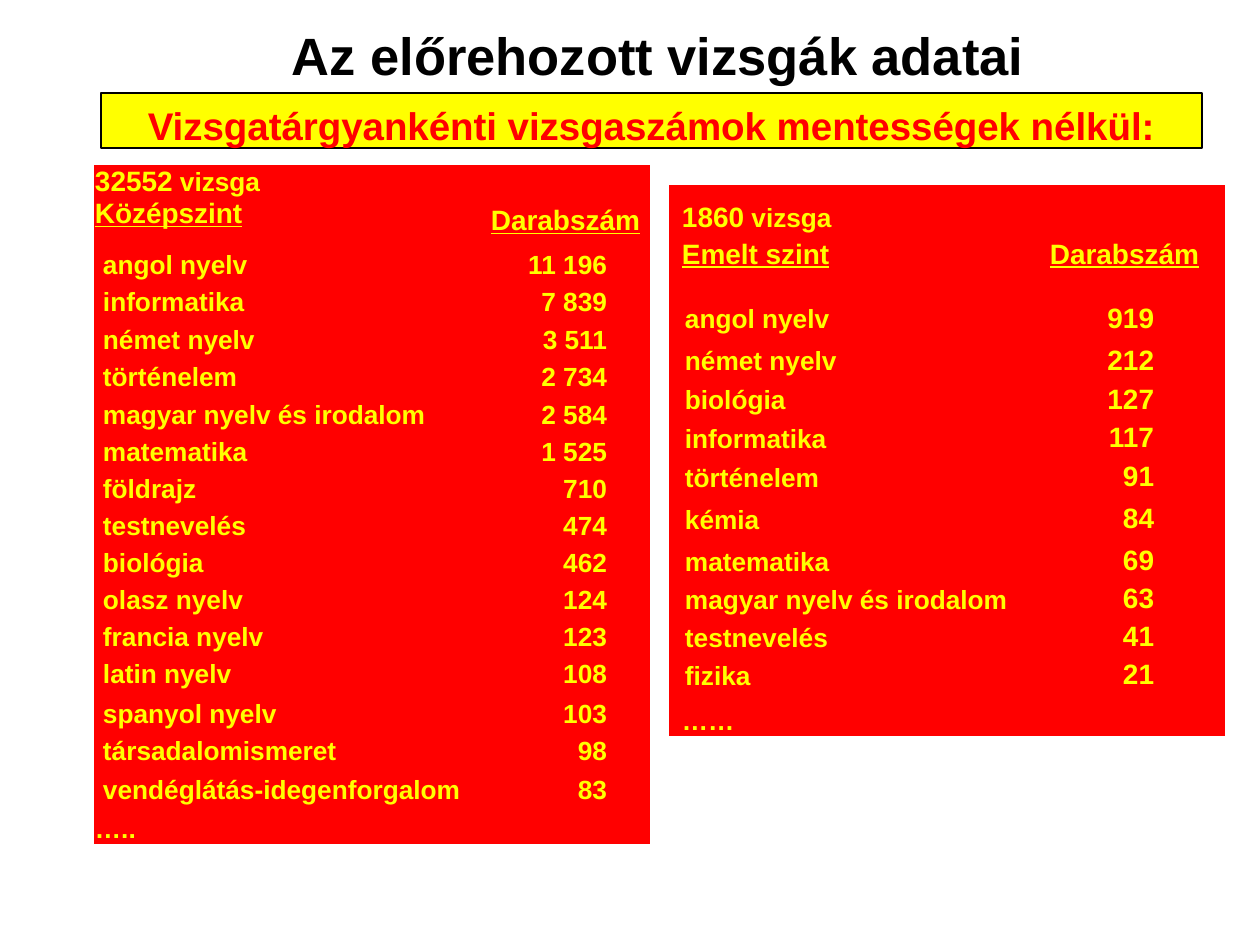
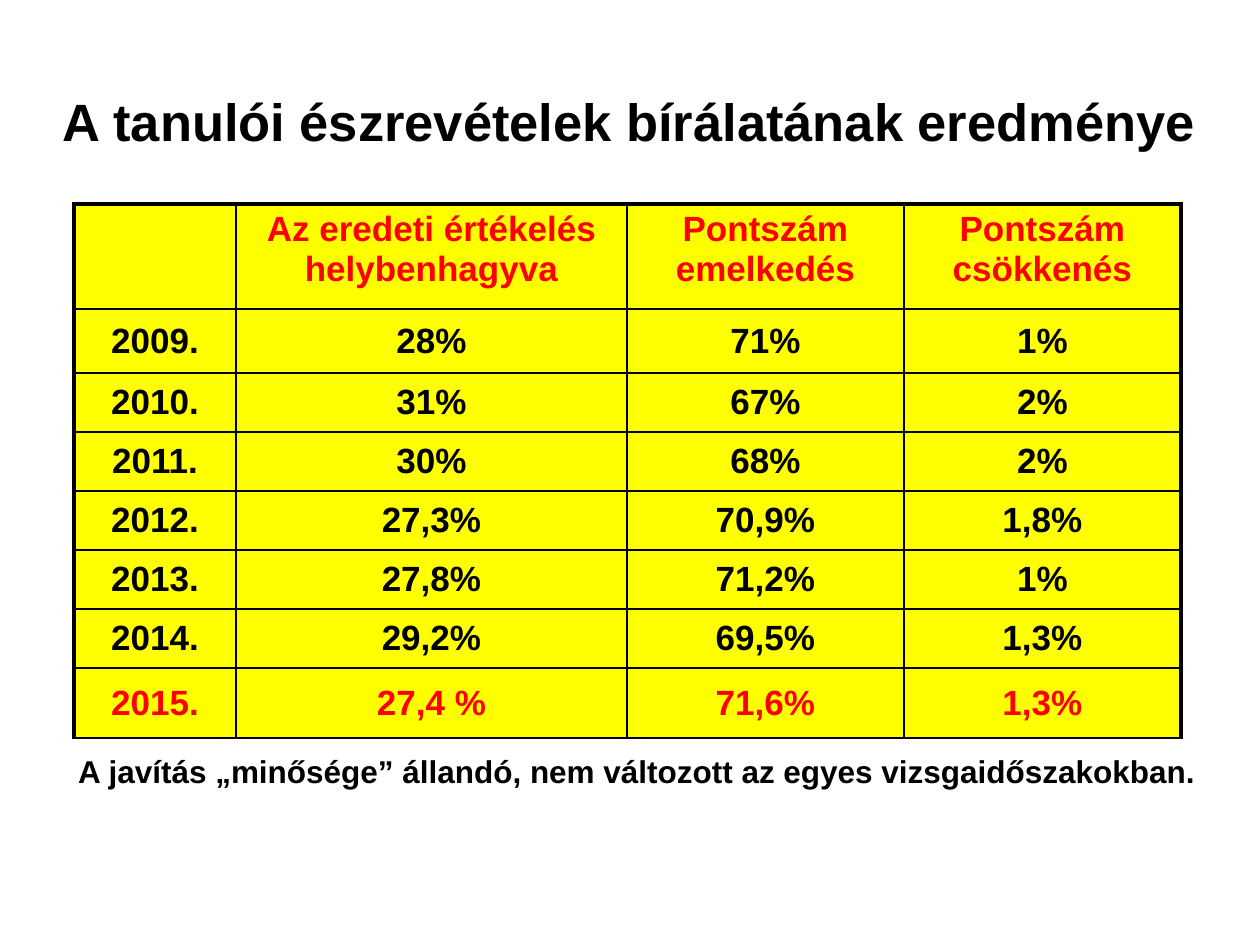
from dataclasses import dataclass
from lxml import etree
from pptx import Presentation
from pptx import util as u
from pptx.dml.color import RGBColor
from pptx.enum import shapes, text
from pptx.oxml.ns import qn


@dataclass(frozen=True)
class Theme:
    font: str = "Arial"
    black: str = "000000"
    red: str = "FF0000"
    yellow: str = "FFFF00"
    title: int = 30
    band: int = 22
    grid: int = 20
    note: int = 18
    head: int = 16
    item: int = 15


T = Theme()
LEFT, MID, RIGHT = text.PP_ALIGN.LEFT, text.PP_ALIGN.CENTER, text.PP_ALIGN.RIGHT
TOP, CENTRE, BASE = (text.MSO_ANCHOR.TOP, text.MSO_ANCHOR.MIDDLE,
                     text.MSO_ANCHOR.BOTTOM)
PLAIN = "{2D5ABB26-0587-4C30-8999-92F81FD0307C}"  # table style without grid

EXAMS = {
    "title": "Az előrehozott vizsgák adatai",
    "band": "Vizsgatárgyankénti vizsgaszámok mentességek nélkül:",
    "unit": "vizsga",
    "count": "Darabszám",
}
MIDDLE = {
    "total": "32552", "level": "Középszint", "more": "…..",
    "rows": [
        ("angol nyelv", "11 196"), ("informatika", "7 839"),
        ("német nyelv", "3 511"), ("történelem", "2 734"),
        ("magyar nyelv és irodalom", "2 584"), ("matematika", "1 525"),
        ("földrajz", "710"), ("testnevelés", "474"), ("biológia", "462"),
        ("olasz nyelv", "124"), ("francia nyelv", "123"),
        ("latin nyelv", "108"), ("spanyol nyelv", "103"),
        ("társadalomismeret", "98"), ("vendéglátás-idegenforgalom", "83"),
    ],
    "at": (94, 165), "cols": [387, 169], "size": T.item,
    "heads": [32, 40],
    "highs": [43, 37, 38, 37, 38] + [37] * 7 + [40, 37, 39, 39],
    "pads": {"head": 1, "name": 9, "count": 43, "tag": 1, "base": 1},
}
UPPER = {
    "total": "1860", "level": "Emelt szint", "more": "……",
    "rows": [
        ("angol nyelv", "919"), ("német nyelv", "212"), ("biológia", "127"),
        ("informatika", "117"), ("történelem", "91"), ("kémia", "84"),
        ("matematika", "69"), ("magyar nyelv és irodalom", "63"),
        ("testnevelés", "41"), ("fizika", "21"),
    ],
    "at": (669, 185), "cols": [367, 189], "size": T.head,
    "heads": [91],
    "highs": [58, 42, 39, 39, 39, 42, 42, 38, 38, 38, 45],
    "pads": {"head": 13, "name": 16, "count": 71, "tag": 13, "base": 6},
}
REVIEW = {
    "title": "A tanulói észrevételek bírálatának eredménye",
    "note": "A javítás „minősége” állandó, nem változott az egyes "
            "vizsgaidőszakokban.",
    "rows": [
        ("", "Az eredeti értékelés helybenhagyva", "Pontszám emelkedés",
         "Pontszám csökkenés"),
        ("2009.", "28%", "71%", "1%"),
        ("2010.", "31%", "67%", "2%"),
        ("2011.", "30%", "68%", "2%"),
        ("2012.", "27,3%", "70,9%", "1,8%"),
        ("2013.", "27,8%", "71,2%", "1%"),
        ("2014.", "29,2%", "69,5%", "1,3%"),
        ("2015.", "27,4 %", "71,6%", "1,3%"),
    ],
    "at": (74, 204), "cols": [162, 391, 277, 277],
    "highs": [105, 64] + [59] * 5 + [70],
}


def px(n):
    return u.Emu(round(n * 914400 / 126))


def rgb(code):
    return RGBColor.from_string(code)


def style(para, size, tint, align=MID, line=False):
    para.alignment = align
    font = para.font
    font.name, font.size, font.bold = T.font, u.Pt(size), True
    font.color.rgb = rgb(tint)
    if line:
        font.underline = True


def head(slide, words, box):
    title = slide.shapes.title
    title.left, title.top, title.width, title.height = map(px, box)
    frame = title.text_frame
    frame.text = words
    frame.auto_size = text.MSO_AUTO_SIZE.NONE
    frame.vertical_anchor = CENTRE
    style(frame.paragraphs[0], T.title, T.black)


def grid(slide, at, cols, highs, fill):
    """Add a plain table with every cell filled."""
    box = (*at, sum(cols), sum(highs))
    frame = slide.shapes.add_table(len(highs), len(cols), *map(px, box))
    for node in frame.element.iter(qn("a:tableStyleId")):
        node.text = PLAIN
    table = frame.table
    table.first_row = table.horz_banding = False
    for col, wide in zip(table.columns, cols):
        col.width = px(wide)
    for row, high in zip(table.rows, highs):
        row.height = px(high)
    for cell in table.iter_cells():
        cell.fill.solid()
        cell.fill.fore_color.rgb = rgb(fill)
    return table


def pad(cell, left=1, right=1, base=0, anchor=BASE):
    cell.margin_left, cell.margin_right = px(left), px(right)
    cell.margin_top, cell.margin_bottom = px(1), px(base)
    cell.vertical_anchor = anchor


def put(cell, words, size, align=LEFT, line=False):
    cell.text_frame.text = words
    style(cell.text_frame.paragraphs[0], size, T.yellow, align, line)


def tally(slide, part):
    """Add one table of exam counts by subject."""
    pads, heads = part["pads"], part["heads"]
    table = grid(slide, part["at"], part["cols"], heads + part["highs"], T.red)
    for cell in table.iter_cells():
        pad(cell)

    top, last = table.cell(0, 0), len(heads) - 1
    anchor = TOP if last else BASE
    pad(top, pads["head"], 1, pads["base"] if not last else 0, anchor)
    put(top, part["total"], T.head)
    unit = top.text_frame.paragraphs[0].add_run()
    unit.text = " " + EXAMS["unit"]
    unit.font.size = u.Pt(T.item)
    if last:
        level = table.cell(last, 0)
        pad(level, pads["head"], anchor=TOP)
        put(level, part["level"], T.head, line=True)
        table.cell(0, 1).merge(table.cell(last, 1))
    else:
        para = top.text_frame.add_paragraph()
        para.text = part["level"]
        para.space_before = u.Pt(3)
        style(para, T.head, T.yellow, LEFT, True)
    tag = table.cell(0, 1)
    pad(tag, 1, pads["tag"], pads["base"])
    put(tag, EXAMS["count"], T.head, MID, True)

    for r, (name, count) in enumerate(part["rows"], len(heads)):
        left, right = table.cell(r, 0), table.cell(r, 1)
        pad(left, pads["name"])
        put(left, name, T.item)
        pad(right, 1, pads["count"])
        put(right, count, part["size"], RIGHT)
    more = table.cell(len(table.rows) - 1, 0)
    pad(more, pads["head"])
    put(more, part["more"], T.item)


def edge(cell, widths):
    """Draw cell borders; widths are points for left, right, top, bottom."""
    props = cell._tc.get_or_add_tcPr()
    for i, (side, wide) in enumerate(zip("LRTB", widths)):
        line = etree.Element(qn("a:ln" + side), w=str(u.Pt(wide)))
        fill = etree.SubElement(line, qn("a:solidFill"))
        etree.SubElement(fill, qn("a:srgbClr"), val=T.black)
        props.insert(i, line)


def exams(slide):
    head(slide, EXAMS["title"], (164, 6, 988, 98))
    band = slide.shapes.add_shape(shapes.MSO_SHAPE.RECTANGLE,
                                  *map(px, (101, 93, 1101, 55)))
    band.shadow.inherit = False
    band.fill.solid()
    band.fill.fore_color.rgb = rgb(T.yellow)
    band.line.color.rgb = rgb(T.black)
    band.line.width = u.Pt(0.75)
    frame = band.text_frame
    frame.text = EXAMS["band"]
    frame.vertical_anchor = TOP
    frame.margin_top = px(9)
    style(frame.paragraphs[0], T.band, T.red)
    for part in (UPPER, MIDDLE):
        tally(slide, part)


def review(slide):
    head(slide, REVIEW["title"], (34, 76, 1191, 89))
    note = slide.shapes.add_textbox(*map(px, (44, 750, 1186, 47))).text_frame
    note.word_wrap = True
    note.text = REVIEW["note"]
    note.paragraphs[0].line_spacing = 0.9
    style(note.paragraphs[0], T.note, T.black)

    rows = REVIEW["rows"]
    table = grid(slide, REVIEW["at"], REVIEW["cols"], REVIEW["highs"], T.yellow)
    end = len(rows) - 1
    for r, row in enumerate(rows):
        for c, words in enumerate(row):
            cell = table.cell(r, c)
            cell.text_frame.text = words
            cell.vertical_anchor = CENTRE if r else TOP
            tint = T.red if r in (0, end) else T.black
            style(cell.text_frame.paragraphs[0], T.grid, tint)
            outer = (c == 0, c == len(row) - 1, r == 0, False)
            edge(cell, [2.25 if out else 1 for out in outer])


def main():
    deck = Presentation()
    deck.slide_width, deck.slide_height = px(1260), px(945)
    for build in (exams, review):
        build(deck.slides.add_slide(deck.slide_layouts[5]))
    deck.save("out.pptx")


if __name__ == "__main__":
    main()
